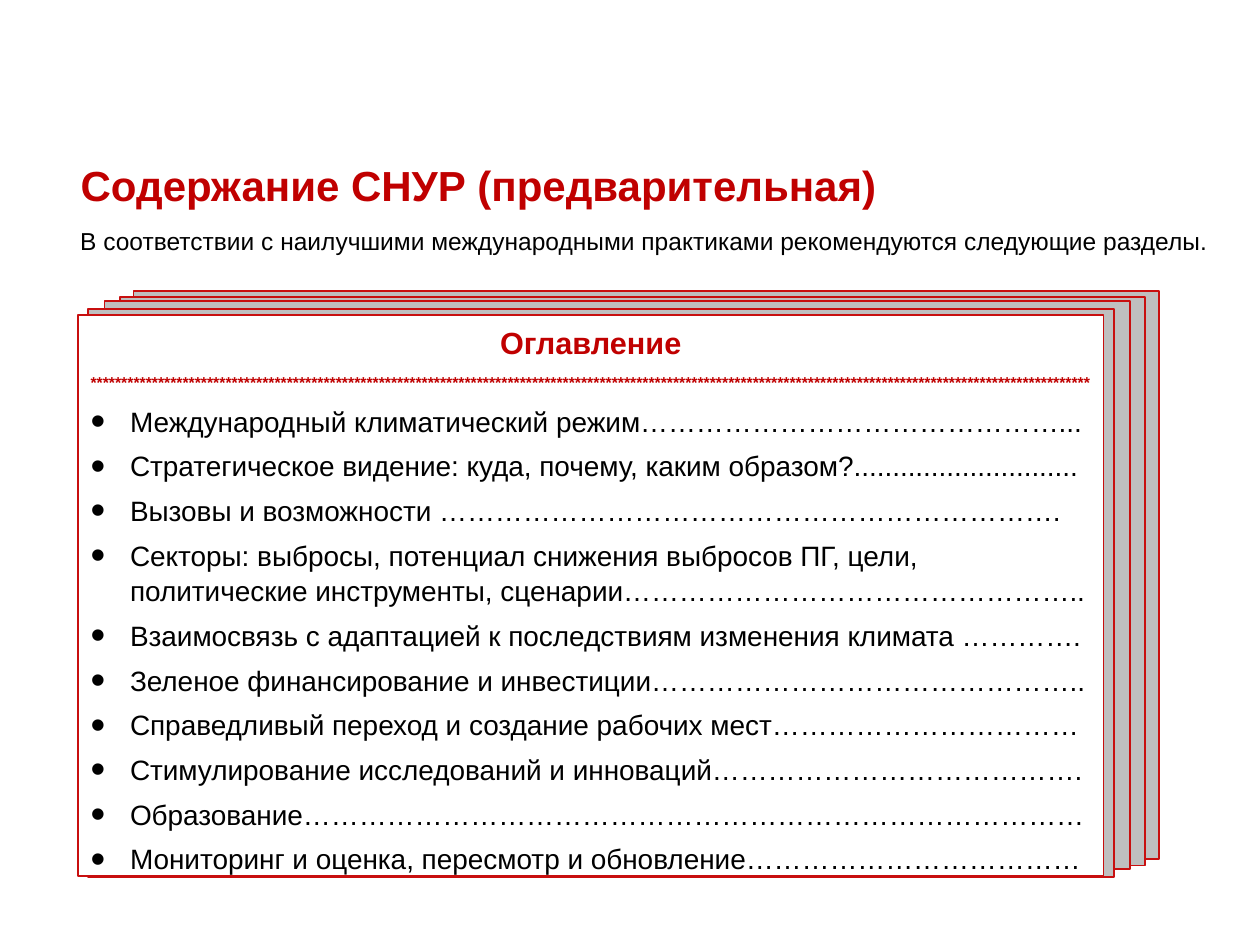
from dataclasses import dataclass

from lxml import etree
from pptx import Presentation
from pptx.dml.color import RGBColor
from pptx.enum import shapes, text
from pptx.oxml import ns
from pptx.util import Pt


@dataclass(frozen=True)
class Theme:
    font: str = "Arial"
    accent: RGBColor = RGBColor(0xC0, 0x00, 0x00)
    border: RGBColor = RGBColor(0xC8, 0x0F, 0x0F)
    sheet: RGBColor = RGBColor(0xBF, 0xBF, 0xBF)
    paper: RGBColor = RGBColor(0xFF, 0xFF, 0xFF)
    ink: RGBColor = RGBColor(0x00, 0x00, 0x00)
    title: float = 24
    intro: float = 14
    heading: float = 17.5
    rule: float = 9
    item: float = 16


@dataclass(frozen=True)
class Box:
    left: float
    top: float
    width: float
    height: float

    def lengths(self) -> tuple:
        return tuple(Pt(v) for v in (self.left, self.top, self.width, self.height))


@dataclass(frozen=True)
class Line:
    words: str
    size: float
    color: RGBColor
    bold: bool = False
    align: text.PP_ALIGN = text.PP_ALIGN.LEFT
    after: float = 0
    spacing: float = 1.0
    indent: float = 0
    bullet: bool = False


THEME = Theme()
TITLE_BOX = Box(38.9, 87.8, 656.6, 33.8)
INTRO_BOX = Box(36, 123.1, 670.3, 56.2)
CONTENTS_BOX = Box(44.6, 180, 586.1, 327.6)
SHEETS = [Box(left, top, 586.1, 324.7) for left, top in
          ((76.3, 166.3), (68.4, 169.9), (59.8, 172.1), (50.4, 176.4))]
SECTIONS = (
    "Международный климатический режим………………………………………...",
    "Стратегическое видение: куда, почему, каким образом?.............................",
    "Вызовы и возможности ………………………………………………………….",
    "Секторы: выбросы, потенциал снижения выбросов ПГ, цели, "
    "политические инструменты, сценарии…………………………………………..",
    "Взаимосвязь с адаптацией к последствиям изменения климата ………….",
    "Зеленое финансирование и инвестиции………………………………………..",
    "Справедливый переход и создание рабочих мест……………………………",
    "Стимулирование исследований и инноваций………………………………….",
    "Образование…………………………………………………………………………",
    "Мониторинг и оценка, пересмотр и обновление………………………………",
)


def apply(target, values: dict) -> None:
    for name, value in values.items():
        setattr(target, name, value)


def place(sp, box: Box) -> None:
    apply(sp, dict(zip(("left", "top", "width", "height"), box.lengths())))


def paint(sp, fill: RGBColor, width: float) -> None:
    sp.fill.solid()
    sp.fill.fore_color.rgb = fill
    sp.line.color.rgb = THEME.border
    sp.line.width = Pt(width)


def set_bullet(p, line: Line) -> None:
    props = p._p.get_or_add_pPr()
    props.set("marL", str(Pt(line.indent)))
    props.set("indent", str(-Pt(line.indent)))
    marks = [("a:buNone", {})]
    if line.bullet:
        marks = [("a:buSzPct", {"val": "150000"}),
                 ("a:buFont", {"typeface": THEME.font}),
                 ("a:buChar", {"char": "•"})]
    for tag, attributes in marks:
        etree.SubElement(props, ns.qn(tag), attributes)


def write(sp, lines: list[Line], fit: text.MSO_AUTO_SIZE) -> None:
    tf = sp.text_frame
    apply(tf, {"word_wrap": True, "auto_size": fit,
               "vertical_anchor": text.MSO_ANCHOR.TOP})
    for i, line in enumerate(lines):
        p = tf.add_paragraph() if i else tf.paragraphs[0]
        apply(p, {"alignment": line.align, "line_spacing": line.spacing,
                  "space_before": Pt(0), "space_after": Pt(line.after)})
        set_bullet(p, line)
        r = p.add_run()
        r.text = line.words
        apply(r.font, {"name": THEME.font, "size": Pt(line.size), "bold": line.bold})
        r.font.color.rgb = line.color


def add_sheet(s, box: Box) -> None:
    sp = s.shapes.add_shape(shapes.MSO_SHAPE.RECTANGLE, *box.lengths())
    sp.shadow.inherit = False
    paint(sp, THEME.sheet, 1)


def add_contents(s) -> None:
    sp = s.placeholders[1]
    sp.element.getparent().append(sp.element)
    place(sp, CONTENTS_BOX)
    paint(sp, THEME.paper, 0.75)
    lines = [
        Line("Оглавление", THEME.heading, THEME.accent, True,
             text.PP_ALIGN.CENTER, after=6, spacing=1.07),
        Line("*" * 163, THEME.rule, THEME.accent, True, after=6, spacing=1.07),
    ]
    lines += [Line(words, THEME.item, THEME.ink, after=5, spacing=1.07,
                   indent=22.5, bullet=True) for words in SECTIONS]
    write(sp, lines, text.MSO_AUTO_SIZE.SHAPE_TO_FIT_TEXT)


def add_intro(s) -> None:
    sp = s.shapes.add_shape(shapes.MSO_SHAPE.ROUNDED_RECTANGLE, *INTRO_BOX.lengths())
    sp.shadow.inherit = False
    sp.fill.background()
    sp.line.fill.background()
    write(sp, [Line("В соответствии с наилучшими международными практиками "
                    "рекомендуются следующие разделы.", THEME.intro, THEME.ink)],
          text.MSO_AUTO_SIZE.NONE)


def add_title(s) -> None:
    sp = s.shapes.title
    place(sp, TITLE_BOX)
    write(sp, [Line("Содержание СНУР (предварительная)", THEME.title,
                    THEME.accent, True)], text.MSO_AUTO_SIZE.NONE)


def main() -> None:
    prs = Presentation()
    apply(prs, {"slide_width": Pt(720), "slide_height": Pt(540)})
    s = prs.slides.add_slide(prs.slide_layouts[1])
    for box in SHEETS:
        add_sheet(s, box)
    add_contents(s)
    add_intro(s)
    add_title(s)
    prs.save("out.pptx")


if __name__ == "__main__":
    main()
